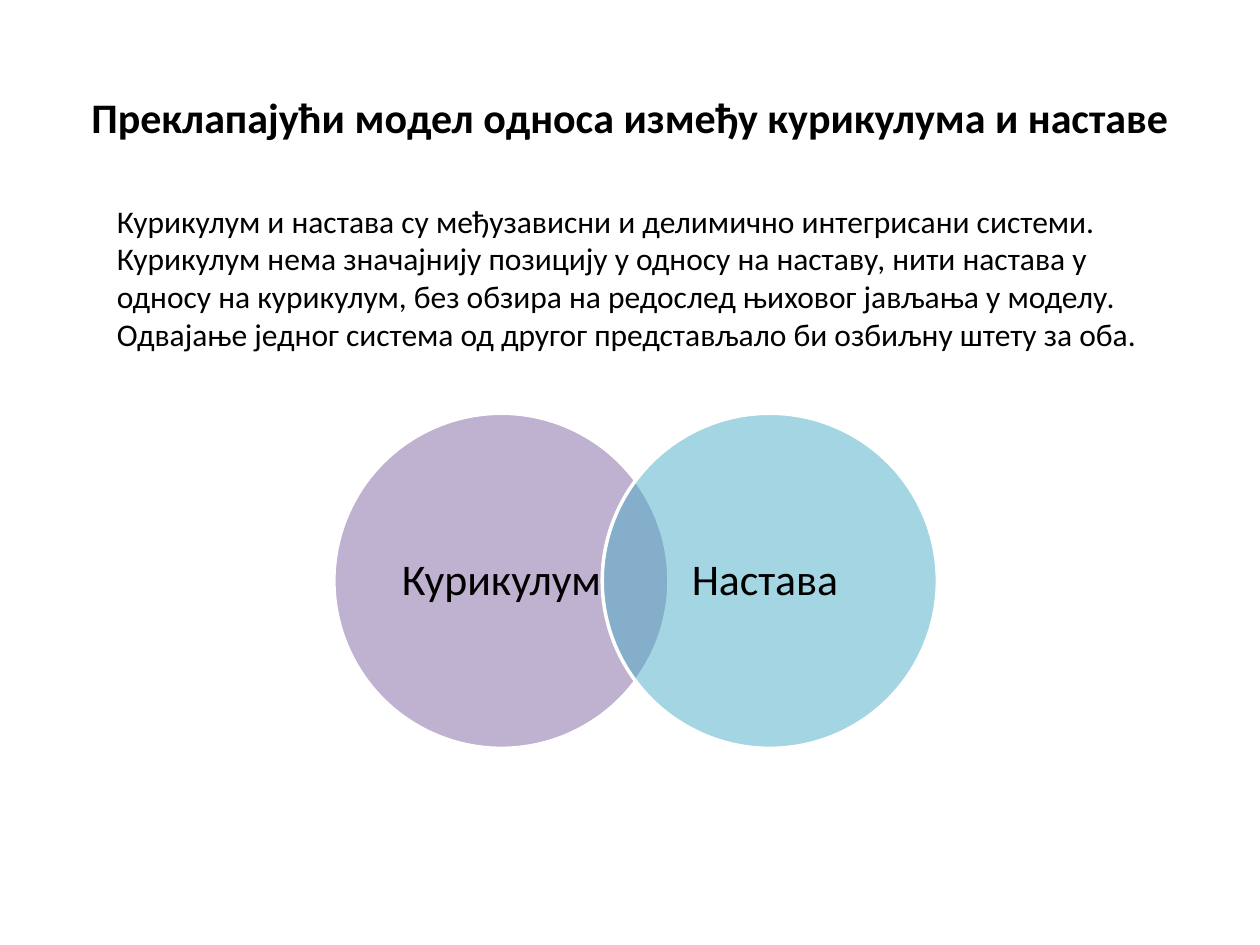
import pptx
import pptx.dml.color
import pptx.enum.shapes
import pptx.enum.text
import pptx.oxml
import pptx.oxml.ns
import pptx.util

ALIGN = pptx.enum.text.PP_ALIGN
ANCHOR = pptx.enum.text.MSO_ANCHOR
COLUMNS, ROWS = 100, 75


def color(value):
    return pptx.dml.color.RGBColor.from_string(value)


class VennSlide:
    """Draws text and translucent circles on a 100 by 75 grid in one style."""

    font = {"name": "Calibri", "bold": False}
    ink = "000000"
    outline = "FFFFFF"

    def __init__(self, deck):
        self.slide = deck.slides.add_slide(deck.slide_layouts[6])
        self.column = deck.slide_width / COLUMNS
        self.row = deck.slide_height / ROWS

    def place(self, left, top, width, height):
        return [round(cells * unit) for cells, unit in zip(
            (left, top, width, height), (self.column, self.row) * 2)]

    def text(self, wording, area, size, frame_format=None, paragraph_format=None, **font_format):
        frame = self.slide.shapes.add_textbox(*self.place(*area)).text_frame
        frame.word_wrap = True
        paragraph = frame.paragraphs[0]
        run = paragraph.add_run()
        run.text = wording
        run.font.color.rgb = color(self.ink)
        font = {**self.font, "size": pptx.util.Pt(size), **font_format}
        for target, values in ((frame, frame_format), (paragraph, paragraph_format), (run.font, font)):
            for attribute, value in (values or {}).items():
                setattr(target, attribute, value)

    def circle(self, area, fill, opacity):
        disc = self.slide.shapes.add_shape(
            pptx.enum.shapes.MSO_SHAPE.OVAL, *self.place(*area))
        disc.shadow.inherit = False
        disc.fill.solid()
        disc.fill.fore_color.rgb = color(fill)
        disc.line.color.rgb = color(self.outline)
        disc.line.width = pptx.util.Pt(2)
        tint = disc.fill._xPr.find(".//" + pptx.oxml.ns.qn("a:srgbClr"))
        alpha = pptx.oxml.parse_xml(
            f'<a:alpha {pptx.oxml.ns.nsdecls("a")} val="{opacity * 1000}"/>')
        tint.append(alpha)

    def system(self, wording, left, top, diameter, fill):
        self.circle((left, top, diameter, diameter), fill, 50)
        inset = diameter * 0.146
        side = diameter - 2 * inset
        horizontal, vertical = pptx.util.Inches(0.15), pptx.util.Inches(0.03)
        self.text(
            wording, (left + inset, top + inset, side, side), 25,
            {"vertical_anchor": ANCHOR.MIDDLE, "margin_left": horizontal, "margin_right": horizontal,
             "margin_top": vertical, "margin_bottom": vertical},
            {"alignment": ALIGN.CENTER, "line_spacing": 0.9})


def main():
    deck = pptx.Presentation()
    deck.slide_width = pptx.util.Inches(10)
    deck.slide_height = pptx.util.Inches(7.5)
    venn = VennSlide(deck)
    venn.text(
        "Преклапајући модел односа између курикулума и наставе", (5, 3, 90, 12.5), 24,
        {"vertical_anchor": ANCHOR.MIDDLE}, {"alignment": ALIGN.CENTER}, bold=True)
    systems = (("Курикулум ", "8064A2"), ("Настава ", "4BACC6"))
    for index, (wording, fill) in enumerate(systems):
        venn.system(wording, 26.5 + index * 21.3, 32.8, 26.6, fill)
    venn.text(
        "Курикулум и настава су међузависни и делимично интегрисани системи. "
        "Курикулум нема значајнију позицију у односу на наставу, нити настава у односу "
        "на курикулум, без обзира на редослед њиховог јављања у моделу. Одвајање једног "
        "система од другог представљало би озбиљну штету за оба.",
        (8.3, 15.5, 85, 13.1), 18,
        {"auto_size": pptx.enum.text.MSO_AUTO_SIZE.SHAPE_TO_FIT_TEXT})
    deck.save("out.pptx")


if __name__ == "__main__":
    main()
